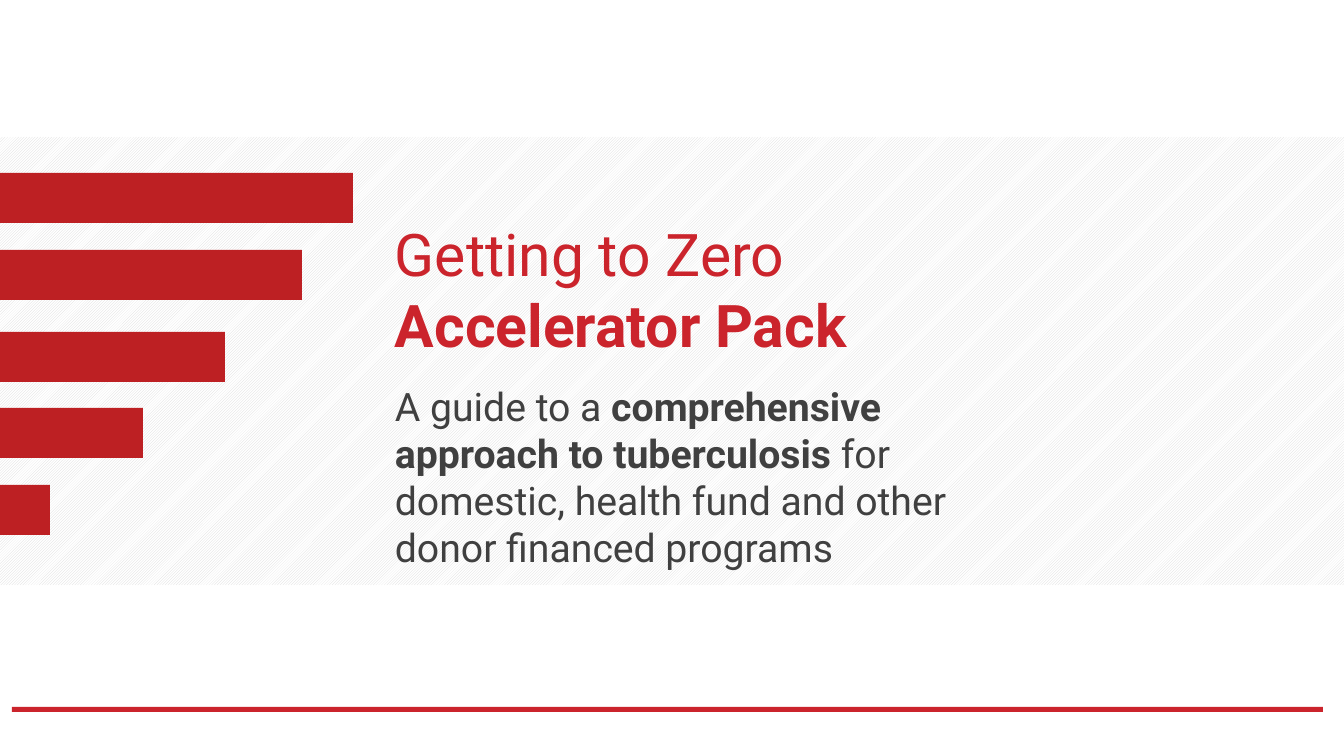
"""Builds the title slide of the Getting to Zero Accelerator Pack."""
from pptx import Presentation
from pptx.dml.color import RGBColor
from pptx.enum.dml import MSO_PATTERN
from pptx.enum.shapes import MSO_SHAPE
from pptx.enum.text import MSO_AUTO_SIZE
from pptx.util import Pt

PX = 914400 / 100.8
RED = RGBColor(0xCB, 0x24, 0x2C)
DARK_RED = RGBColor(0xBD, 0x20, 0x23)
CHARCOAL = RGBColor(0x40, 0x40, 0x40)
STRIPE = RGBColor(0xD9, 0xD9, 0xD9)
WHITE = RGBColor(0xFF, 0xFF, 0xFF)


def add_block(shapes, box, color=None):
    block = shapes.add_shape(MSO_SHAPE.RECTANGLE, *(round(n * PX) for n in box))
    block.shadow.inherit = False
    block.line.fill.background()
    if color is not None:
        block.fill.solid()
        block.fill.fore_color.rgb = color
    return block


def add_text(shapes, box, lines, size, color, wrap):
    frame = shapes.add_textbox(*(round(n * PX) for n in box)).text_frame
    frame.word_wrap = wrap
    frame.auto_size = MSO_AUTO_SIZE.SHAPE_TO_FIT_TEXT
    paragraph = frame.paragraphs[0]
    for number, line in enumerate(lines):
        if number:
            paragraph.add_line_break()
        for words, bold in line:
            run = paragraph.add_run()
            run.text = words
            run.font.name = "Roboto"
            run.font.size = Pt(size)
            run.font.bold = bold
            run.font.color.rgb = color


prs = Presentation()
prs.slide_width = round(1344 * PX)
prs.slide_height = round(756 * PX)
slide = prs.slides.add_slide(prs.slide_layouts[6])

add_block(slide.shapes, (12, 707, 1311, 5), RED)

band = add_block(slide.shapes, (0, 137, 1344, 448))
band.fill.patterned()
band.fill.pattern = MSO_PATTERN.LIGHT_UPWARD_DIAGONAL
band.fill.fore_color.rgb = STRIPE
band.fill.back_color.rgb = WHITE

title = [[("Getting to Zero", False)], [("Accelerator Pack", True)]]
add_text(slide.shapes, (385, 213, 502, 152), title, 42, RED, False)

subtitle = [[
    ("A guide to a ", False),
    ("comprehensive approach to tuberculosis", True),
    (" for domestic, health fund and other donor financed programs", False),
]]
add_text(slide.shapes, (385, 377, 667, 201), subtitle, 28, CHARCOAL, True)

countdown = slide.shapes.add_group_shape()
for top, length in [(173, 353), (250, 302), (332, 225), (408, 143), (485, 50)]:
    add_block(countdown.shapes, (0, top, length, 50), DARK_RED)

prs.save("out.pptx")
